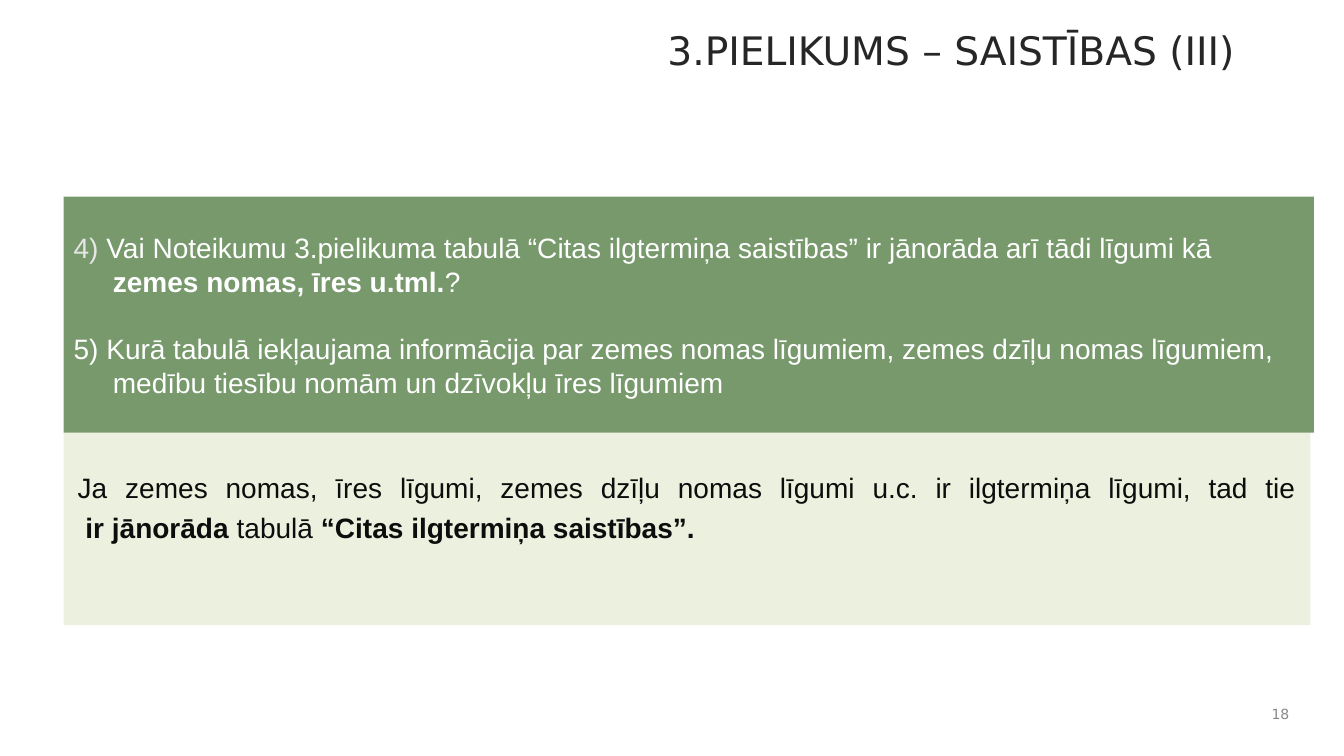
from lxml.etree import SubElement
from pptx import Presentation
from pptx.dml.color import RGBColor
from pptx.enum.shapes import MSO_SHAPE
from pptx.enum.text import MSO_ANCHOR as Anchor, PP_ALIGN as Align
from pptx.oxml.ns import qn
from pptx.util import Pt

WHITE = RGBColor(0xFF, 0xFF, 0xFF)
PALE_GREY = RGBColor(0xE6, 0xE6, 0xE6)
NUMBER_GREY = RGBColor(0x89, 0x89, 0x89)
TITLE_GREY = RGBColor(0x26, 0x26, 0x26)
INK = RGBColor(0x0D, 0x0D, 0x0D)
GREEN = RGBColor(0x4A, 0x77, 0x3C)
PALE_GREEN = RGBColor(0xEB, 0xF1, 0xDE)

HEADING_FONT = "DejaVu Sans"
BODY_FONT = "Arial"
BODY_SIZE = 20
HANGING = 28


def add_span(para, text, size, font, color, bold=False):
    span = para.add_run()
    span.text = text
    span.font.size = Pt(size)
    span.font.name = font
    span.font.bold = bold
    span.font.color.rgb = color


def add_label(page, box, text, size, color, anchor):
    """Add a right-aligned line in the heading font."""
    frame = page.shapes.add_textbox(*map(Pt, box)).text_frame
    frame.word_wrap = True
    frame.vertical_anchor = anchor
    para = frame.paragraphs[0]
    para.alignment = Align.RIGHT
    add_span(para, text, size, HEADING_FONT, color)


def add_panel(page, box, color, anchor):
    panel = page.shapes.add_shape(MSO_SHAPE.RECTANGLE, *map(Pt, box))
    panel.shadow.inherit = False
    panel.fill.solid()
    panel.fill.fore_color.rgb = color
    panel.line.fill.background()
    panel.text_frame.word_wrap = True
    panel.text_frame.vertical_anchor = anchor
    return panel


def set_opacity(shape, percent):
    color = shape.fill._xPr.find(qn("a:solidFill"))[0]
    SubElement(color, qn("a:alpha")).set("val", str(percent * 1000))


def add_questions(page, box, questions):
    """Each question is a list of (text, color, bold) spans."""
    panel = add_panel(page, box, GREEN, Anchor.MIDDLE)
    set_opacity(panel, 75)
    frame = panel.text_frame
    for index, spans in enumerate(questions):
        para = frame.add_paragraph() if index else frame.paragraphs[0]
        para.alignment = Align.LEFT
        if index:
            para.space_before = Pt(24)
        properties = para._p.get_or_add_pPr()
        properties.set("marL", str(Pt(HANGING)))
        properties.set("indent", str(-Pt(HANGING)))
        for text, color, bold in spans:
            add_span(para, text, BODY_SIZE, BODY_FONT, color, bold)


def add_answer(page, box, first_line, second_line):
    frame = add_panel(page, box, PALE_GREEN, Anchor.TOP).text_frame
    frame.margin_left = frame.margin_right = Pt(10)
    frame.margin_top = Pt(22)
    para = frame.paragraphs[0]
    para.alignment = Align.JUSTIFY
    para.line_spacing = 1.2
    add_span(para, first_line, BODY_SIZE, BODY_FONT, INK)
    para.add_line_break()
    for text, bold in second_line:
        add_span(para, text, BODY_SIZE, BODY_FONT, INK, bold)


def main():
    deck = Presentation()
    deck.slide_width, deck.slide_height = Pt(960), Pt(540)
    page = deck.slides.add_slide(deck.slide_layouts[6])

    add_label(page, (133, 15, 756, 65), "3.PIELIKUMS – SAISTĪBAS (III)",
              28, TITLE_GREY, Anchor.TOP)
    add_label(page, (896, 498, 32, 24), "18", 10, NUMBER_GREY, Anchor.MIDDLE)
    add_answer(
        page, (45.5, 309, 890.5, 137.5),
        "Ja zemes nomas, īres līgumi, zemes dzīļu nomas līgumi u.c. "
        "ir ilgtermiņa līgumi, tad tie",
        [(" ir jānorāda ", True), ("tabulā ", False),
         ("“Citas ilgtermiņa saistības”.", True)])
    add_questions(page, (45.5, 140.5, 893, 168.5), [
        [("4) ", PALE_GREY, False),
         ("Vai Noteikumu 3.pielikuma tabulā “Citas ilgtermiņa saistības” "
          "ir jānorāda arī tādi līgumi kā ", WHITE, False),
         ("zemes nomas, īres u.tml.", WHITE, True),
         ("?", WHITE, False)],
        [("5) Kurā tabulā iekļaujama informācija par zemes nomas līgumiem, "
          "zemes dzīļu nomas līgumiem,  medību tiesību nomām un dzīvokļu "
          "īres līgumiem", WHITE, False)],
    ])
    deck.save("out.pptx")


if __name__ == "__main__":
    main()
